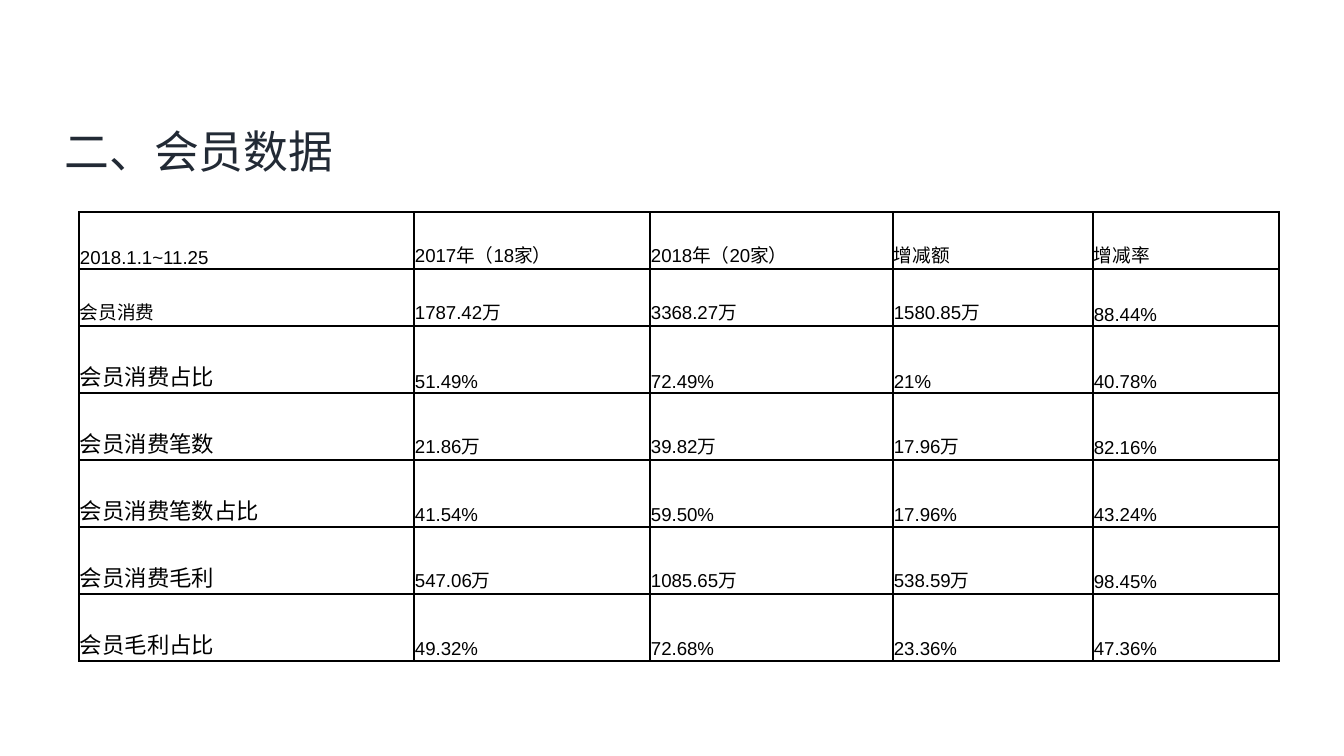
from itertools import groupby

from lxml import etree
from pptx import Presentation
from pptx.dml.color import RGBColor
from pptx.enum.text import MSO_ANCHOR, PP_ALIGN
from pptx.oxml.ns import qn
from pptx.util import Pt

PX = 914400 / 134.4
BLACK = RGBColor(0x00, 0x00, 0x00)
NAVY = RGBColor(0x22, 0x2A, 0x35)
LATIN, HAN = "Arial", "Noto Sans CJK SC"
LEFT, MIDDLE, BOTTOM = PP_ALIGN.LEFT, MSO_ANCHOR.MIDDLE, MSO_ANCHOR.BOTTOM

COLS = [335, 236, 243, 200, 186]
ROWS = [57] * 2 + [67] * 5
DATA = [
    ["2018.1.1~11.25", "2017年（18家）", "2018年（20家）", "增减额", "增减率"],
    ["会员消费", "1787.42万", "3368.27万", "1580.85万", "88.44%"],
    ["会员消费占比", "51.49%", "72.49%", "21%", "40.78%"],
    ["会员消费笔数", "21.86万", "39.82万", "17.96万", "82.16%"],
    ["会员消费笔数占比", "41.54%", "59.50%", "17.96%", "43.24%"],
    ["会员消费毛利", "547.06万", "1085.65万", "538.59万", "98.45%"],
    ["会员毛利占比", "49.32%", "72.68%", "23.36%", "47.36%"],
]


def px(n):
    return round(n * PX)


def style(run, size, color, face):
    run.font.size = Pt(size)
    run.font.color.rgb = color
    run.font.name = face
    etree.SubElement(run._r.get_or_add_rPr(), qn("a:ea"), typeface=face)


def add_title(slide, text):
    title = slide.shapes.title
    title.left, title.top, title.width, title.height = map(px, (51, 117, 985, 67))
    frame = title.text_frame
    frame.text = text
    frame.vertical_anchor = MIDDLE
    para = frame.paragraphs[0]
    para.alignment = LEFT
    style(para.runs[0], 24, NAVY, HAN)


def add_lines(cell):
    """Draw a thin black line on all four sides of the cell."""
    props = cell._tc.get_or_add_tcPr()
    for side in "LRTB":
        line = etree.SubElement(props, qn(f"a:ln{side}"), w=str(Pt(1)))
        fill = etree.SubElement(line, qn("a:solidFill"))
        etree.SubElement(fill, qn("a:srgbClr"), val=str(BLACK))


def fill_cell(cell, text, size):
    """Write the text with one run for each script."""
    cell.margin_left = cell.margin_right = px(1)
    cell.margin_top = cell.margin_bottom = px(1)
    cell.vertical_anchor = BOTTOM
    add_lines(cell)
    cell.fill.background()
    para = cell.text_frame.paragraphs[0]
    for ascii_part, chars in groupby(text, str.isascii):
        run = para.add_run()
        run.text = "".join(chars)
        style(run, size, BLACK, LATIN if ascii_part else HAN)


def add_grid(slide):
    box = map(px, (79, 212, sum(COLS), sum(ROWS)))
    table = slide.shapes.add_table(len(ROWS), len(COLS), *box).table
    table.first_row = table.horz_banding = False
    for col, width in zip(table.columns, COLS):
        col.width = px(width)
    for row, height in zip(table.rows, ROWS):
        row.height = px(height)
    for r, texts in enumerate(DATA):
        for c, text in enumerate(texts):
            fill_cell(table.cell(r, c), text, 12 if c == 0 and r > 1 else 10)


def main():
    deck = Presentation()
    deck.slide_width, deck.slide_height = px(1344), px(756)
    slide = deck.slides.add_slide(deck.slide_layouts[5])
    add_title(slide, "二、会员数据")
    add_grid(slide)
    deck.save("out.pptx")


if __name__ == "__main__":
    main()
